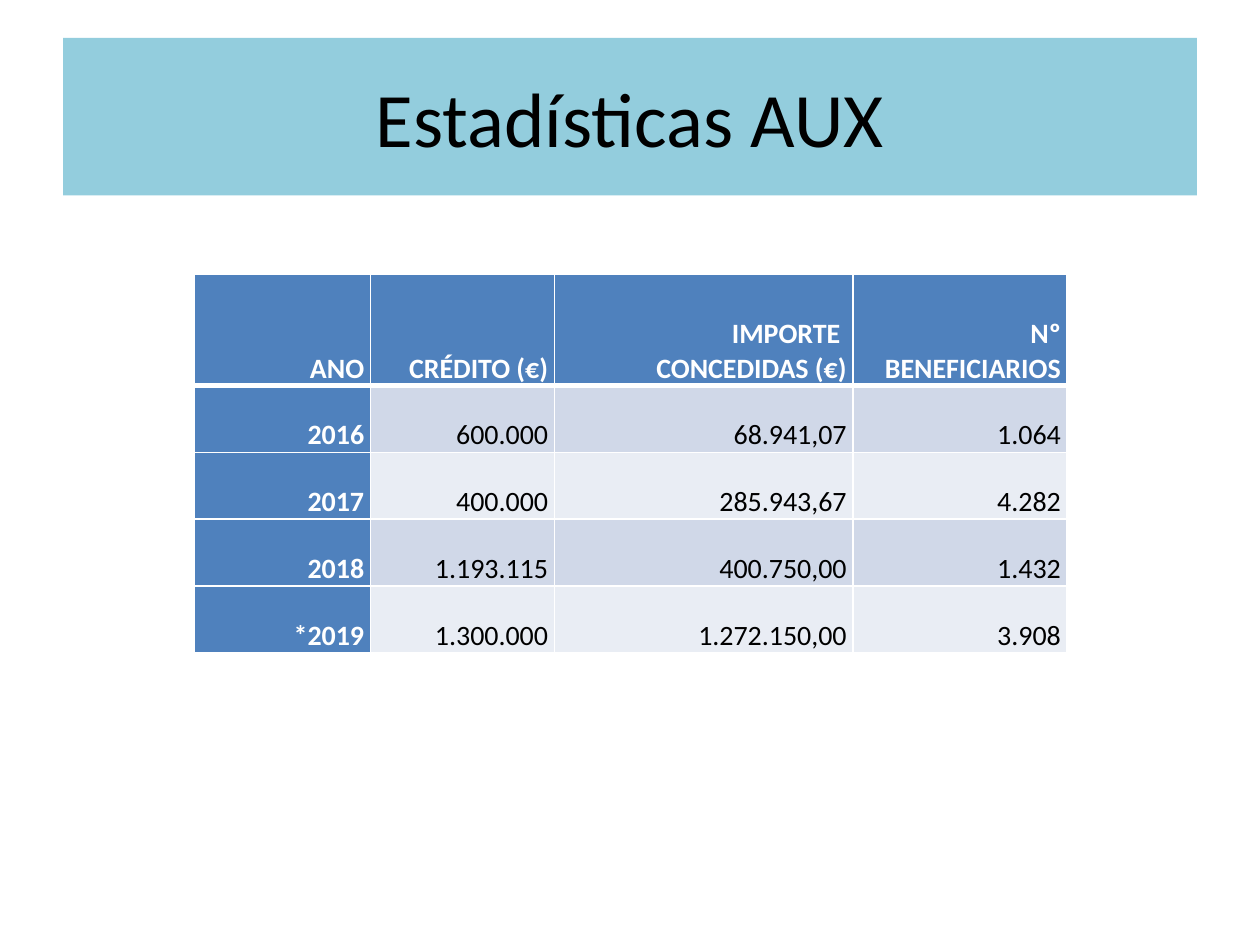
from dataclasses import dataclass

from lxml import etree
from pptx import Presentation
from pptx import util as u
from pptx.dml.color import RGBColor
from pptx.enum import text
from pptx.oxml.ns import qn

SCALE = 9144  # EMU in one px, at 100 px to the inch


@dataclass(frozen=True)
class Theme:
    font: str = "Calibri"
    title: int = 44
    body: int = 16
    ink: str = "000000"
    paper: str = "FFFFFF"
    banner: str = "93CDDD"
    head: str = "4F81BD"
    bands: tuple = ("D0D8E8", "E9EDF4")
    thin: int = 1
    thick: int = 3


THEME = Theme()
TITLE = "Estadísticas AUX"
HEADS = ("ANO", "CRÉDITO (€)", "IMPORTE \nCONCEDIDAS (€)", "Nº BENEFICIARIOS")
YEARS = (
    ("2016", "600.000", "68.941,07", "1.064"),
    (" 2017", "400.000", "285.943,67", "4.282"),
    ("2018", "1.193.115", "400.750,00", "1.432"),
    ("*2019", "1.300.000", "1.272.150,00", "3.908"),
)
COLS = (140, 146, 237, 170)
HEAD_H, ROW_H = 88, 53


def px(n):
    return u.Emu(n * SCALE)


def paint(fill, color):
    fill.solid()
    fill.fore_color.rgb = RGBColor.from_string(color)


def style(frame, size, color, align, bold=False):
    for para in frame.paragraphs:
        para.alignment = align
        for run in para.runs:
            font = run.font
            font.name, font.size, font.bold = THEME.font, u.Pt(size), bold
            font.color.rgb = RGBColor.from_string(color)


def edge(cell, side, width):
    props = cell._tc.get_or_add_tcPr()
    line = etree.SubElement(props, qn(f"a:ln{side}"), w=str(u.Pt(width)))
    fill = etree.SubElement(line, qn("a:solidFill"))
    etree.SubElement(fill, qn("a:srgbClr"), val=THEME.paper)


def add_title(slide, left, top, width, height):
    title = slide.shapes.title
    title.left, title.top = px(left), px(top)
    title.width, title.height = px(width), px(height)
    paint(title.fill, THEME.banner)
    frame = title.text_frame
    frame.text = TITLE
    frame.vertical_anchor = text.MSO_ANCHOR.MIDDLE
    style(frame, THEME.title, THEME.ink, text.PP_ALIGN.CENTER)


def fill_cell(cell, words, row, col):
    """Format one cell; the first row and column are headings."""
    head = row == 0 or col == 0
    for side in "LRTB":
        rule = (side == "B" and row == 0) or (side == "T" and row == 1)
        edge(cell, side, THEME.thick if rule else THEME.thin)
    paint(cell.fill, THEME.head if head else THEME.bands[(row - 1) % 2])
    cell.margin_left = cell.margin_right = px(5)
    cell.margin_top = cell.margin_bottom = 0
    cell.vertical_anchor = text.MSO_ANCHOR.BOTTOM
    cell.text_frame.text = words
    style(cell.text_frame, THEME.body, THEME.paper if head else THEME.ink,
          text.PP_ALIGN.RIGHT, head)


def add_stats(slide, left, top):
    data = (HEADS, *YEARS)
    highs = [HEAD_H] + [ROW_H] * len(YEARS)
    table = slide.shapes.add_table(
        len(data), len(COLS), px(left), px(top), px(sum(COLS)), px(sum(highs))
    ).table
    table.first_col = True
    for col, wide in zip(table.columns, COLS):
        col.width = px(wide)
    for row, high in zip(table.rows, highs):
        row.height = px(high)
    for r, line in enumerate(data):
        for c, words in enumerate(line):
            fill_cell(table.cell(r, c), words, r, c)


def main():
    deck = Presentation()
    deck.slide_width, deck.slide_height = px(1000), px(750)
    slide = deck.slides.add_slide(deck.slide_layouts.get_by_name("Title Only"))
    paint(slide.background.fill, THEME.paper)
    add_title(slide, 50, 30, 900, 125)
    add_stats(slide, 154, 218)
    deck.save("out.pptx")


if __name__ == "__main__":
    main()
